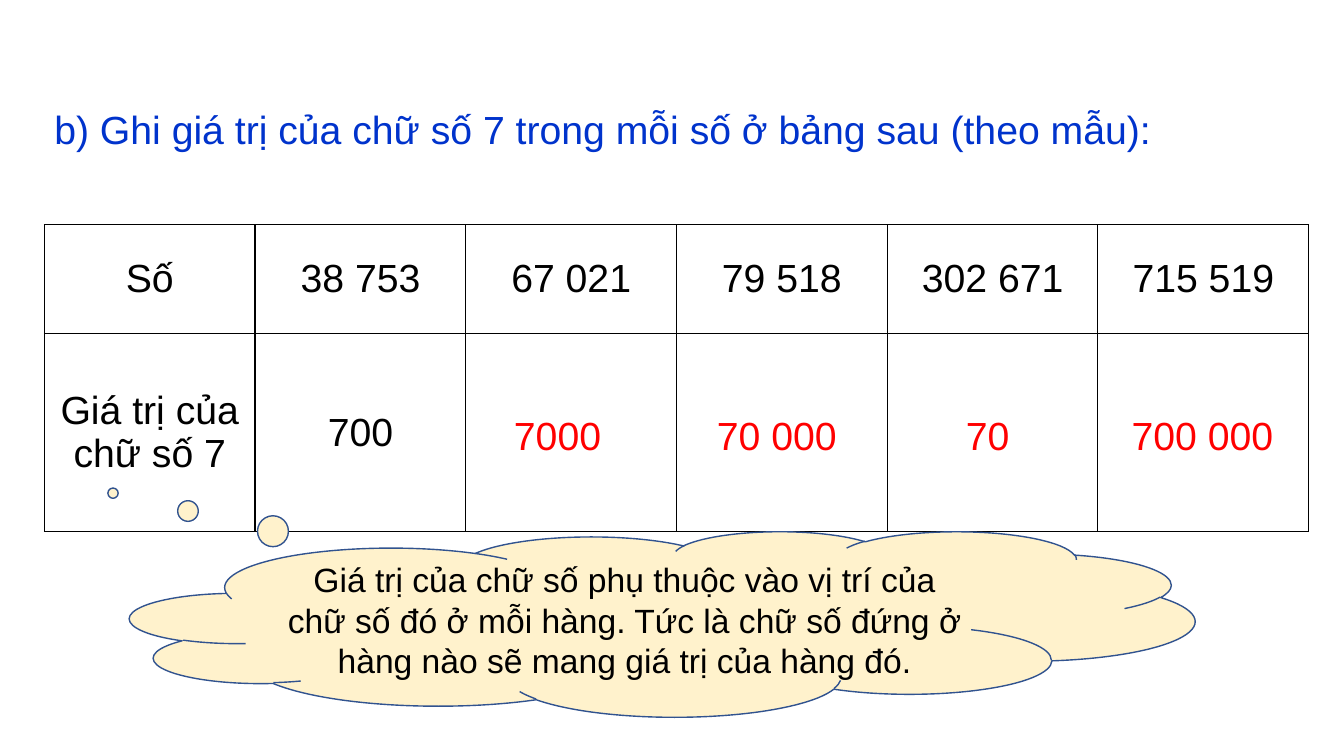
"""Build a slide about the place value of the digit 7."""
import dataclasses

import lxml.etree
import pptx
import pptx.dml.color
import pptx.enum.shapes
import pptx.enum.text
import pptx.oxml.ns
import pptx.slide
import pptx.table
import pptx.text.text
import pptx.util

Inches = pptx.util.Inches
RGBColor = pptx.dml.color.RGBColor
Align = pptx.enum.text.PP_ALIGN
Anchor = pptx.enum.text.MSO_ANCHOR

BLACK = RGBColor(0x00, 0x00, 0x00)
BLUE = RGBColor(0x00, 0x33, 0xCC)
RED = RGBColor(0xFF, 0x00, 0x00)
CREAM = RGBColor(0xFF, 0xF2, 0xCC)
NAVY = RGBColor(0x31, 0x53, 0x8F)

COLUMN_WIDTH = 2.09
ROW_HEIGHTS = (1.08, 1.96)
ROWS = (
    ("Số", "38 753", "67 021", "79 518", "302 671", "715 519"),
    ("Giá trị của chữ số 7", "700", "", "", "", ""),
)


@dataclasses.dataclass(frozen=True)
class Label:
    text: str
    left: float
    top: float
    width: float
    color: RGBColor = RED
    alignment: Align = Align.CENTER


LABELS = (
    Label("b) Ghi giá trị của chữ số 7 trong mỗi số ở bảng sau (theo mẫu):",
          0.44, 1, 11.41, BLUE, Align.JUSTIFY),
    Label("7000", 4.85, 4.03, 1.36),
    Label("70 000", 6.88, 4.03, 1.65),
    Label("70", 8.97, 4.03, 1.65),
    Label("700 000", 10.96, 4.03, 1.93),
)


def write_text(frame: pptx.text.text.TextFrame, text: str, *, size: int = 28,
               color: RGBColor = BLACK, alignment: Align = Align.CENTER) -> None:
    """Write one formatted paragraph into a text frame."""
    frame.word_wrap = True
    paragraph = frame.paragraphs[0]
    paragraph.alignment = alignment
    run = paragraph.add_run()
    run.text = text
    run.font.name = "Arial"
    run.font.size = pptx.util.Pt(size)
    run.font.color.rgb = color


def add_label(slide: pptx.slide.Slide, label: Label) -> None:
    """Add a text box for a label."""
    box = slide.shapes.add_textbox(Inches(label.left), Inches(label.top),
                                   Inches(label.width), Inches(0.57))
    write_text(box.text_frame, label.text, color=label.color, alignment=label.alignment)
    box.text_frame.auto_size = pptx.enum.text.MSO_AUTO_SIZE.SHAPE_TO_FIT_TEXT


def add_borders(cell: pptx.table._Cell) -> None:
    """Draw a thin black line on each side of a cell."""
    qualify = pptx.oxml.ns.qn
    properties = cell._tc.get_or_add_tcPr()
    for side in ("a:lnL", "a:lnR", "a:lnT", "a:lnB"):
        line = lxml.etree.SubElement(properties, qualify(side), w=str(pptx.util.Pt(1)))
        fill = lxml.etree.SubElement(line, qualify("a:solidFill"))
        lxml.etree.SubElement(fill, qualify("a:srgbClr"), val=str(BLACK))


def add_number_table(slide: pptx.slide.Slide) -> None:
    """Add the table of numbers and digit values."""
    column_count = len(ROWS[0])
    table = slide.shapes.add_table(
        len(ROWS), column_count, Inches(0.44), Inches(2.23),
        Inches(COLUMN_WIDTH * column_count), Inches(sum(ROW_HEIGHTS))).table
    table.first_row = False
    table.horz_banding = False
    for column in table.columns:
        column.width = Inches(COLUMN_WIDTH)
    for row, height, texts in zip(table.rows, ROW_HEIGHTS, ROWS):
        row.height = Inches(height)
        for cell, text in zip(row.cells, texts):
            add_borders(cell)
            cell.fill.background()
            cell.vertical_anchor = Anchor.MIDDLE
            if text:
                write_text(cell.text_frame, text)


def add_cloud(slide: pptx.slide.Slide) -> None:
    """Add the thought cloud with the rule."""
    cloud = slide.shapes.add_shape(pptx.enum.shapes.MSO_SHAPE.CLOUD_CALLOUT,
                                   Inches(1.29), Inches(5.27), Inches(10.56), Inches(1.84))
    cloud.adjustments[0] = -0.516
    cloud.adjustments[1] = -0.705
    cloud.shadow.inherit = False
    cloud.fill.solid()
    cloud.fill.fore_color.rgb = CREAM
    cloud.line.color.rgb = NAVY
    cloud.line.width = pptx.util.Pt(1)
    cloud.text_frame.vertical_anchor = Anchor.MIDDLE
    write_text(cloud.text_frame,
               "Giá trị của chữ số phụ thuộc vào vị trí của chữ số đó ở mỗi hàng. "
               "Tức là chữ số đứng ở hàng nào sẽ mang giá trị của hàng đó.", size=24)


def main() -> None:
    """Build and save the presentation."""
    presentation = pptx.Presentation()
    presentation.slide_width = Inches(13.33)
    presentation.slide_height = Inches(7.5)
    slide = presentation.slides.add_slide(presentation.slide_layouts[6])
    add_number_table(slide)
    for label in LABELS:
        add_label(slide, label)
    add_cloud(slide)
    presentation.save("out.pptx")


if __name__ == "__main__":
    main()
